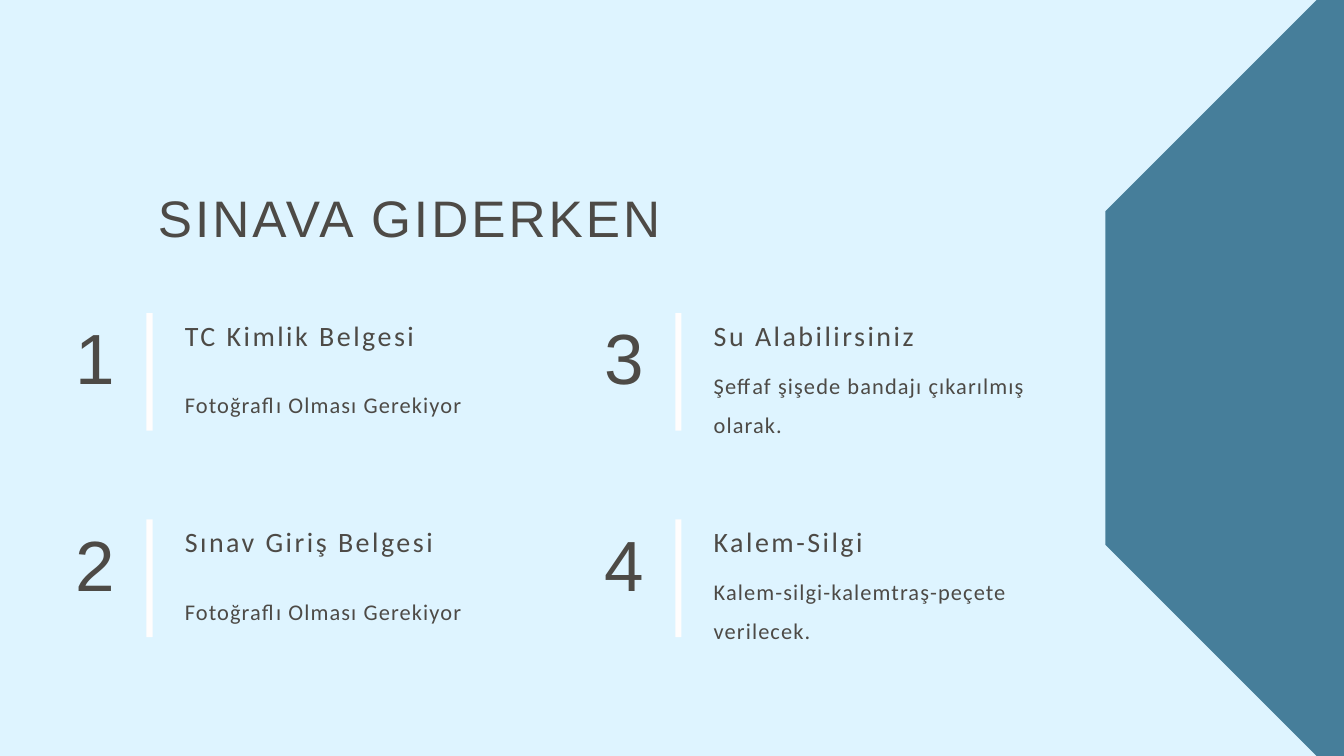
import pptx
import pptx.util
import pptx.dml.color
import pptx.enum.shapes
import pptx.enum.text
from pptx.util import Inches

SHAPE = pptx.enum.shapes.MSO_SHAPE
ALIGN = pptx.enum.text.PP_ALIGN
ANCHOR = pptx.enum.text.MSO_ANCHOR
FIT = pptx.enum.text.MSO_AUTO_SIZE

SKY, TEAL, WHITE, INK = "DEF4FF", "467E9A", "FFFDFD", "4D4A46"

# Text styles: font, size, line height and letter spacing, in points
TITLE = dict(name="Arial", size=55, line=67.7, gap=3.3)
DIGIT = dict(name="Arial", size=76.1, line=93.6, gap=4.6)
HEAD = dict(name="Calibri", size=30, line=48.6, gap=2.7)
BODY = dict(name="Calibri", size=24, line=42, gap=1.2)

# Heading, detail, and drop from the card's top to the detail
CARDS = [
    ("TC Kimlik Belgesi", "Fotoğraflı Olması Gerekiyor", 1.08, 0.51),
    ("Sınav Giriş Belgesi", "Fotoğraflı Olması Gerekiyor", 1.08, 0.51),
    ("Su Alabilirsiniz", "Şeffaf şişede bandajı çıkarılmış olarak.", 0.79, 1.09),
    ("Kalem-Silgi", "Kalem-silgi-kalemtraş-peçete verilecek.", 0.79, 1.09),
]


def paint(fill, color):
    fill.solid()
    fill.fore_color.rgb = pptx.dml.color.RGBColor.from_string(color)


def write(shape, text, style):
    frame = shape.text_frame
    form = dict(word_wrap=True, auto_size=FIT.SHAPE_TO_FIT_TEXT,
                vertical_anchor=ANCHOR.TOP, margin_left=0, margin_top=0,
                margin_right=0, margin_bottom=0)
    for key, value in form.items():
        setattr(frame, key, value)
    para = frame.paragraphs[0]
    para.alignment = ALIGN.LEFT
    para.line_spacing = pptx.util.Pt(style["line"])
    run = para.add_run()
    run.text = text
    for key, value in dict(name=style["name"],
                           size=pptx.util.Pt(style["size"])).items():
        setattr(run.font, key, value)
    paint(run.font.fill, INK)
    run._r.get_or_add_rPr().set("spc", str(round(style["gap"] * 100)))


def add_text(shapes, box, text, style):
    write(shapes.add_textbox(*map(Inches, box)), text, style)


def add_block(shapes, kind, box, color):
    block = shapes.add_shape(kind, *map(Inches, box))
    block.shadow.inherit = False
    paint(block.fill, color)
    block.line.fill.background()


def add_title(slide, box, text):
    title = slide.shapes.title
    for key, value in zip(("left", "top", "width", "height"), box):
        setattr(title, key, Inches(value))
    write(title, text, TITLE)


def add_card(slide, box, digit, card):
    left, top, width, height = box
    head, body, drop, tall = card
    shapes = slide.shapes.add_group_shape().shapes
    inner = left + 1.63
    wide = width - 1.63
    add_text(shapes, (left, top + 0.08, 0.97, 1.29), str(digit), DIGIT)
    add_text(shapes, (inner, top, wide, 0.59), head, HEAD)
    add_text(shapes, (inner, top + drop, wide, tall), body, BODY)
    # Upright divider
    add_block(shapes, SHAPE.RECTANGLE,
              (left + 1.06, top + 0.1, 0.09, height), WHITE)


def add_grid(slide, box):
    left, top, width, height = box
    for i, card in enumerate(CARDS):
        col, row = divmod(i, 2)
        place = (left + col * 7.87, top + row * 3.07, width, height)
        add_card(slide, place, i + 1, card)


def main():
    deck = pptx.Presentation()
    deck.slide_width, deck.slide_height = Inches(20), Inches(11.25)
    slide = deck.slides.add_slide(deck.slide_layouts.get_by_name("Title Only"))
    paint(slide.background.fill, SKY)
    add_title(slide, (2.35, 2.74, 10.08, 0.94), "SINAVA GIDERKEN")
    add_grid(slide, (1.12, 4.56, 6.54, 1.75))
    # Octagon running past the right edge
    add_block(slide.shapes, SHAPE.OCTAGON, (16.45, -0.37, 11.99, 11.99), TEAL)
    deck.save("out.pptx")


if __name__ == "__main__":
    main()
